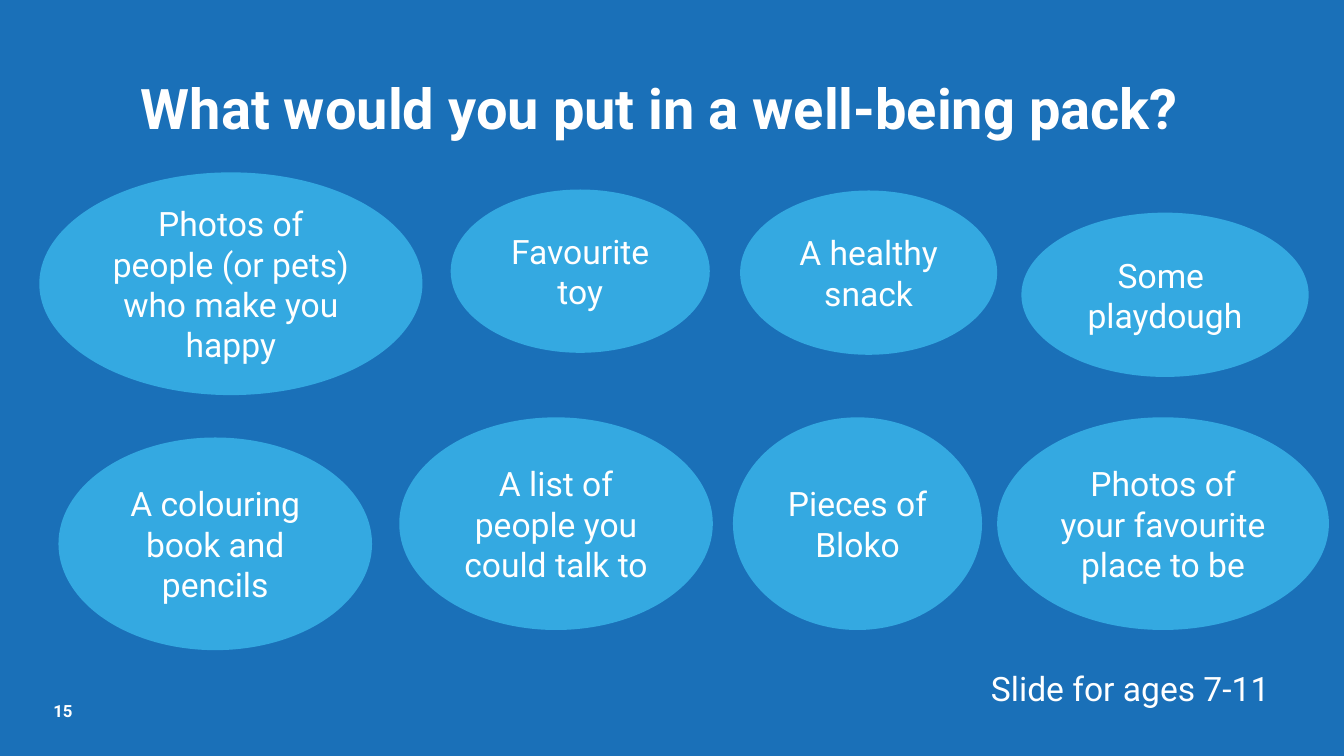
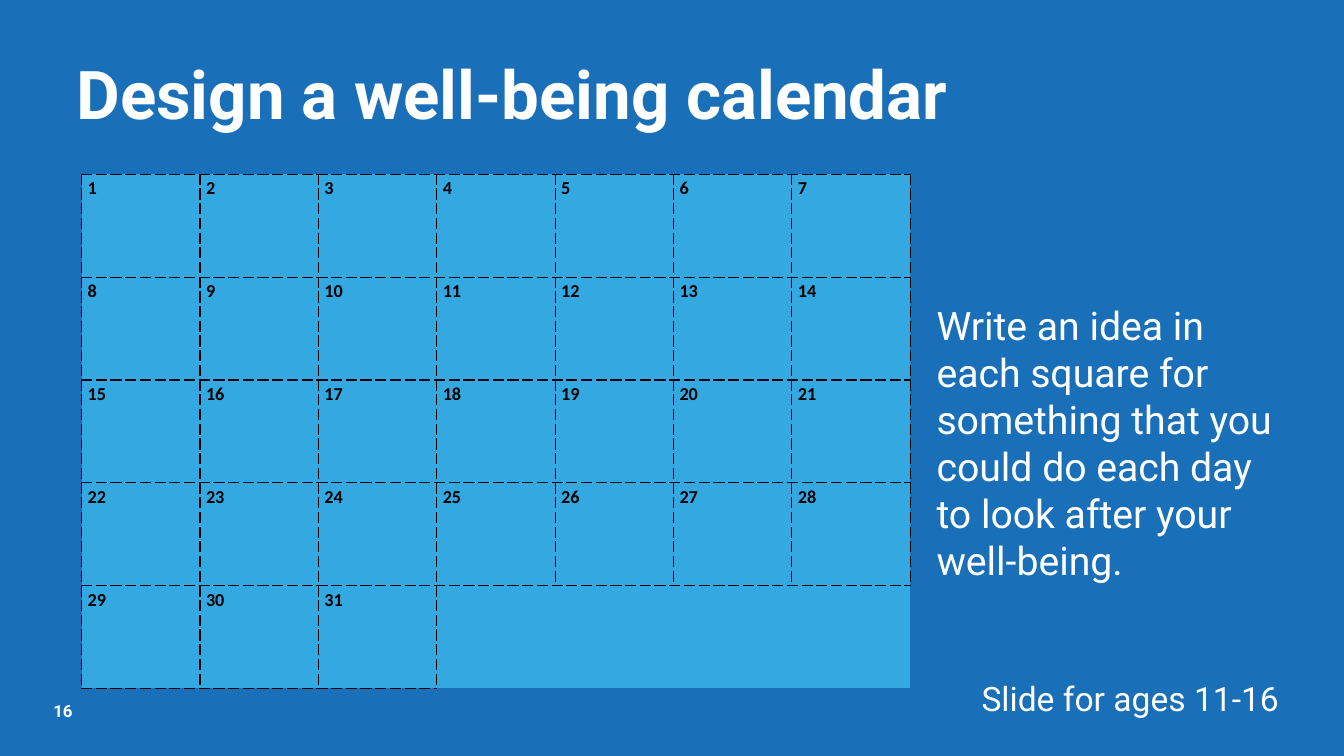
"""Build two well-being activity slides."""
import pptx
import pptx.util
import pptx.dml.color
import pptx.enum.shapes
import pptx.enum.text
import pptx.oxml
import pptx.oxml.ns

INK, PAPER, SKY, BLACK = "FFFFFF", "1A70B8", "34A9E1", "000000"
WIDE, HIGH = 13.33, 7.5
LEFT, MID = pptx.enum.text.PP_ALIGN.LEFT, pptx.enum.text.PP_ALIGN.CENTER
TOP, CORE, BASE = (getattr(pptx.enum.text.MSO_ANCHOR, name)
                   for name in ("TOP", "MIDDLE", "BOTTOM"))

PAGES = [
    dict(num=15, title="What would you put in a well-being pack?",
         spot=(0.41, 0.68, 12.26, 0.77), size=40, align=MID,
         ages="Slide for ages 7-11", foot=6.58),
    dict(num=16, title="Design a well-being calendar",
         spot=(0.66, 0.47, 11.59, 0.91), size=48, align=LEFT,
         ages="Slide for ages 11-16", foot=6.68),
]
IDEAS = [
    ("Photos of people (or pets) who make you happy", 0.39, 1.71, 3.8, 2.21),
    ("Favourite toy", 4.47, 1.88, 2.57, 1.62),
    ("A healthy snack", 7.34, 1.89, 2.55, 1.63),
    ("Some \nplaydough", 10.13, 2.11, 2.85, 1.63),
    ("A colouring book and pencils", 0.58, 4.34, 3.11, 2.11),
    ("A list of people you could talk to", 3.96, 4.14, 3.11, 2.11),
    ("Pieces of Bloko", 7.27, 4.14, 2.47, 2.11),
    ("Photos of your favourite place to be", 9.89, 4.14, 3.29, 2.11),
]
TASK = ("Write an idea in each square for something that you could do "
        "each day to look after your well-being.")
DAYS, COLS, ROWS = 31, 7, 5
GRID = (0.81, 1.73, 8.22, 5.1)


def rgb(code):
    """Turn a hex string into a colour."""
    return pptx.dml.color.RGBColor.from_string(code)


def inch(*vals):
    """Turn numbers into lengths."""
    return [pptx.util.Inches(val) for val in vals]


def assign(item, vals):
    """Set each attribute named in a dict."""
    for key, val in vals.items():
        setattr(item, key, val)


def paint(item, code):
    """Give an item a solid fill."""
    item.fill.solid()
    item.fill.fore_color.rgb = rgb(code)


def write(frame, text, size, code=INK, face="Roboto", bold=False, **para):
    """Fill a text frame with one style of text."""
    frame.text = text
    for line in frame.paragraphs:
        assign(line, para)
        for run in line.runs:
            assign(run.font, dict(name=face, size=pptx.util.Pt(size), bold=bold))
            run.font.color.rgb = rgb(code)


def label(slide, spot, text, size, anchor=TOP, pad=None, **form):
    """Add a wrapped text box."""
    frame = slide.shapes.add_textbox(*inch(*spot)).text_frame
    assign(frame, dict(word_wrap=True, vertical_anchor=anchor))
    if pad is not None:
        sides = ("left", "top", "right", "bottom")
        assign(frame, {"margin_" + side: pad for side in sides})
    write(frame, text, size, **form)


def bubble(slide, text, *spot):
    """Add an ellipse that holds an idea."""
    oval = pptx.enum.shapes.MSO_SHAPE.OVAL
    shape = slide.shapes.add_shape(oval, *inch(*spot))
    shape.shadow.inherit = False
    paint(shape, SKY)
    shape.line.fill.background()
    shape.text_frame.vertical_anchor = CORE
    write(shape.text_frame, text, 24, alignment=MID)


def border(cell, sides):
    """Dash the named sides of a cell and clear the others."""
    props = cell._tc.get_or_add_tcPr()
    space = pptx.oxml.ns.nsdecls("a")
    dash = (f'<a:solidFill><a:srgbClr val="{BLACK}"/></a:solidFill>'
            '<a:prstDash val="dash"/>')
    for side in "LRTB":
        body = dash if side in sides else "<a:noFill/>"
        props.append(pptx.oxml.parse_xml(
            f'<a:ln{side} {space} w="12700">{body}</a:ln{side}>'))


def calendar(slide):
    """Add the month as a table."""
    table = slide.shapes.add_table(ROWS, COLS, *inch(*GRID)).table
    edge, gap = inch(0.06, 0)
    for spot, cell in enumerate(table.iter_cells()):
        day = spot + 1
        sides = "LRTB" if day <= DAYS else "LT" if day == DAYS + 1 else "T"
        border(cell, sides)
        paint(cell, SKY)
        assign(cell, dict(margin_left=edge, margin_right=edge,
                          margin_top=gap, margin_bottom=gap))
        if day <= DAYS:
            write(cell.text_frame, str(day), 13, BLACK, "Calibri", True,
                  line_spacing=1.15, space_after=pptx.util.Pt(12))


def start(deck, page):
    """Add a slide with its title, number and age note."""
    slide = deck.slides.add_slide(deck.slide_layouts[6])
    label(slide, (0.53, 6.83, 0.73, 0.32), str(page["num"]), 12,
          BASE, 0, bold=True)
    label(slide, page["spot"], page["title"], page["size"],
          bold=True, alignment=page["align"])
    label(slide, (9.35, page["foot"], 3.72, 0.5), page["ages"], 24,
          alignment=MID)
    return slide


def main():
    """Build and save the deck."""
    deck = pptx.Presentation()
    deck.slide_width, deck.slide_height = inch(WIDE, HIGH)
    paint(deck.slide_master.background, PAPER)
    pack, month = [start(deck, page) for page in PAGES]
    for idea in IDEAS:
        bubble(pack, *idea)
    calendar(month)
    label(month, (9.19, 2.94, 3.72, 2.46), TASK, 28)
    deck.save("out.pptx")


if __name__ == "__main__":
    main()
